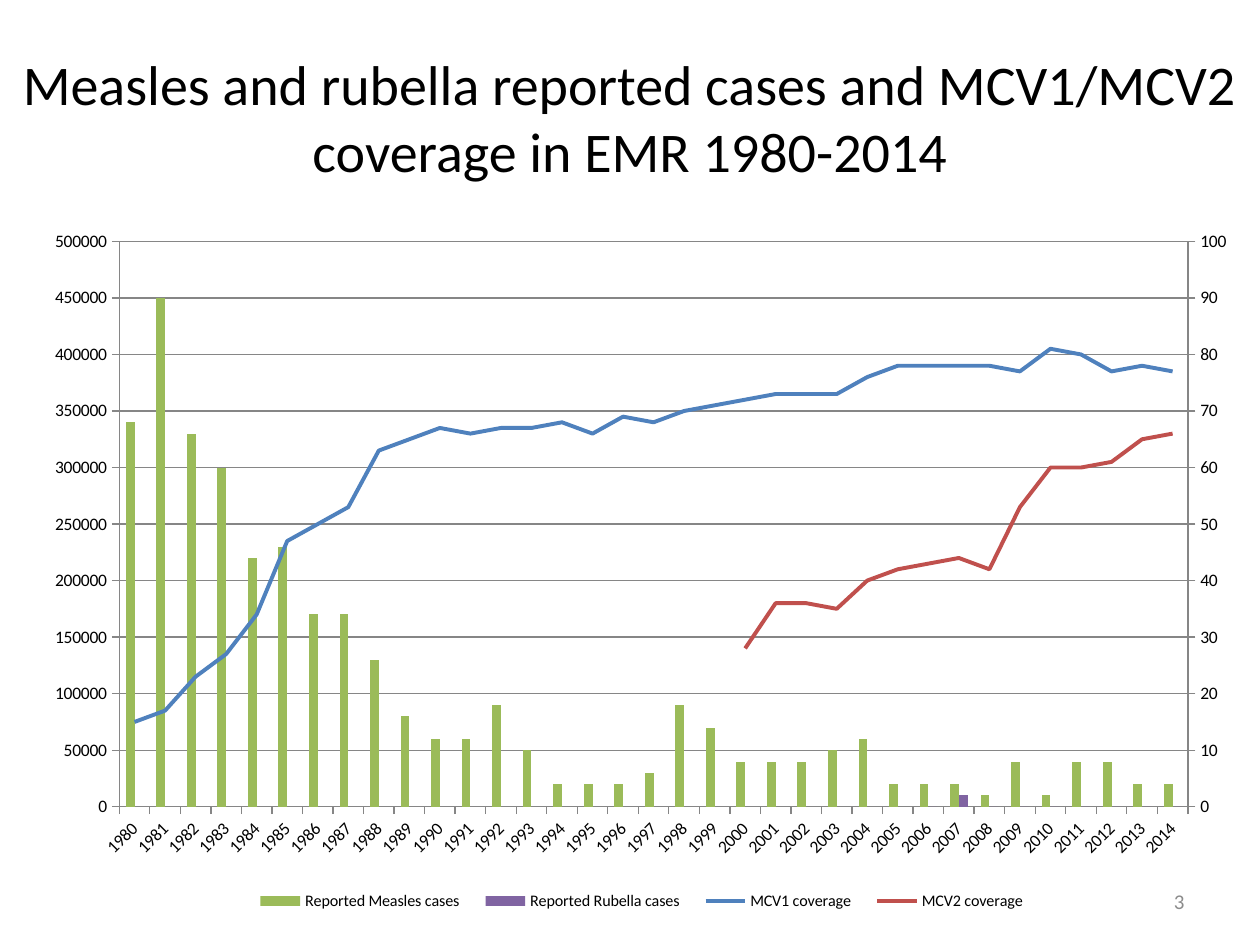
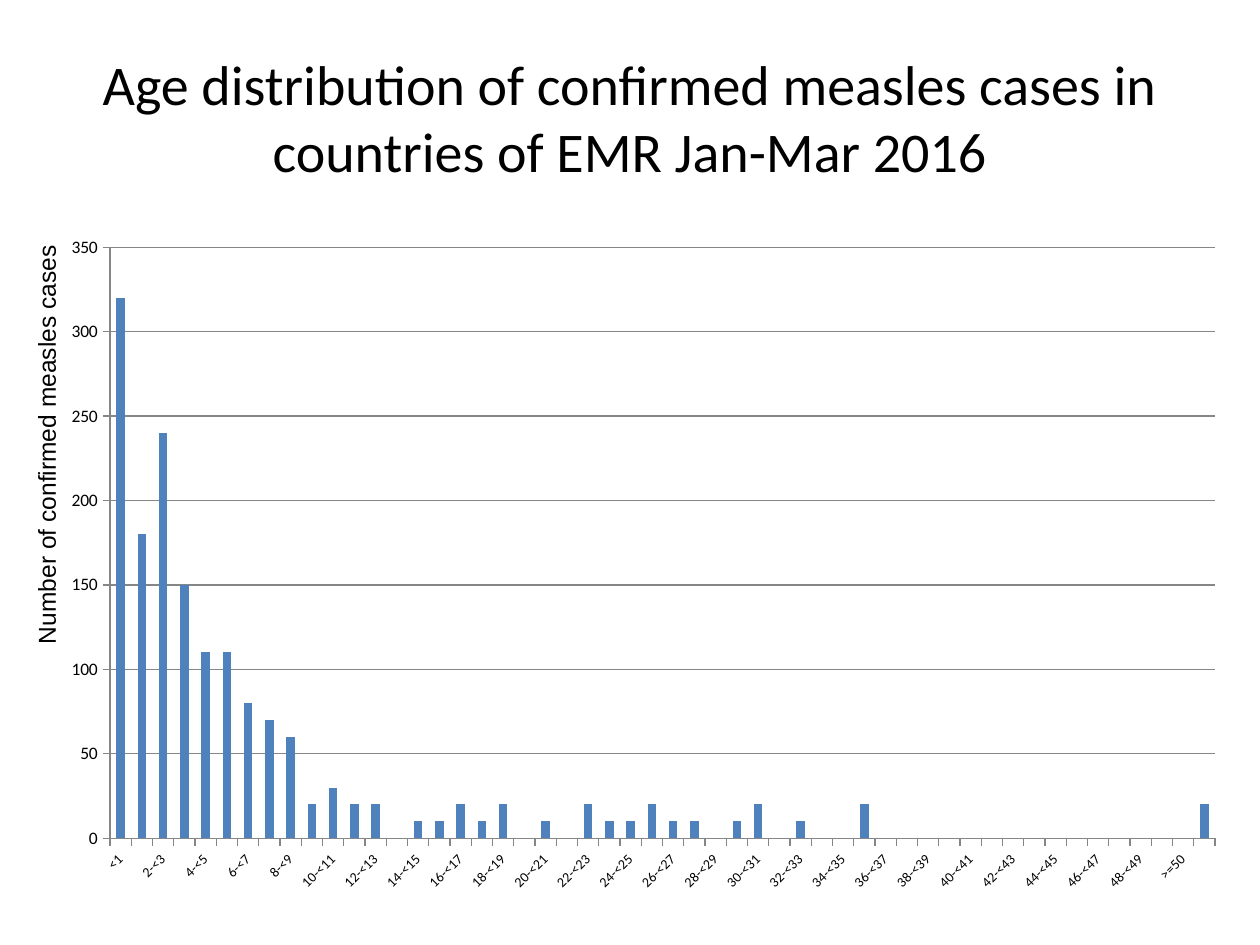
from copy import deepcopy

from lxml.etree import SubElement
from pptx import Presentation
from pptx.chart.data import CategoryChartData
from pptx.dml.color import RGBColor
from pptx.enum.chart import XL_CHART_TYPE, XL_LEGEND_POSITION, XL_MARKER_STYLE, XL_TICK_MARK
from pptx.enum.text import MSO_ANCHOR, PP_ALIGN
from pptx.oxml import parse_xml
from pptx.oxml.ns import nsdecls, qn
from pptx.util import Pt

# Shared scale, fonts and colours
PX = 9144  # 100 px to the inch
BODY_FONT = "Calibri"
BLACK = RGBColor(0x00, 0x00, 0x00)
GREY = RGBColor(0x8C, 0x8C, 0x8C)
AXIS_GREY = RGBColor(0x86, 0x86, 0x86)
GREEN = RGBColor(0x9B, 0xBB, 0x59)
PURPLE = RGBColor(0x80, 0x64, 0xA2)
BLUE = RGBColor(0x4F, 0x81, 0xBD)
RED = RGBColor(0xC0, 0x50, 0x4D)

# Reported cases and vaccine coverage, by year
YEARS = [str(year) for year in range(1980, 2015)]
MEASLES = [10000 * count for count in (
    34, 45, 33, 30, 22, 23, 17, 17, 13, 8, 6, 6, 9, 5, 2, 2, 2, 3,
    9, 7, 4, 4, 4, 5, 6, 2, 2, 2, 1, 4, 1, 4, 4, 2, 2)]
RUBELLA = [None] * 26 + [0, 10000] + [0] * 7
MCV1 = [15, 17, 23, 27, 34, 47, 50, 53, 63, 65, 67, 66, 67, 67, 68, 66, 69, 68,
        70, 71, 72, 73, 73, 73, 76, 78, 78, 78, 78, 77, 81, 80, 77, 78, 77]
MCV2 = [None] * 20 + [28, 36, 36, 35, 40, 42, 43, 44, 42, 53, 60, 60, 61, 65, 66]
REPORTED_SERIES = {
    "Reported Measles cases": MEASLES,
    "Reported Rubella cases": RUBELLA,
    "MCV1 coverage": MCV1,
    "MCV2 coverage": MCV2,
}

# Confirmed cases, by age
AGES = ["<1"] + [f"{age}-{'' if age == 15 else '<'}{age + 1}" for age in range(1, 50)]
AGES += [">=50", "unkAge"]
CASES_BY_AGE = [320, 180, 240, 150, 110, 110, 80, 70, 60, 20, 30, 20, 20, 0, 10, 10, 20, 10,
                20, 0, 10, 0, 20, 10, 10, 20, 10, 10, 0, 10, 20, 0, 10, 0, 0, 20]
CASES_BY_AGE += [0] * 15 + [20]


def px(*lengths):
    return [length * PX for length in lengths]


def style_font(font, size, color=BLACK, name=BODY_FONT):
    font.size = Pt(size)
    font.name = name
    font.color.rgb = color


def add_text(page, text, place, size, color=BLACK, font=BODY_FONT,
             align=PP_ALIGN.LEFT, anchor=MSO_ANCHOR.TOP, rotation=0):
    box = page.shapes.add_textbox(*px(*place))
    box.rotation = rotation
    frame = box.text_frame
    frame.word_wrap = True
    frame.vertical_anchor = anchor
    para = frame.paragraphs[0]
    para.alignment = align
    for number, line in enumerate(text.split("\n")):
        if number:
            para.add_line_break()
        span = para.add_run()
        span.text = line
        style_font(span.font, size, color, font)


def add_title(page, text, left, width):
    add_text(page, text, (left, 30, width, 125), 32,
             align=PP_ALIGN.CENTER, anchor=MSO_ANCHOR.MIDDLE)


def remove_children(parent, tag):
    for child in parent.findall(qn(tag)):
        parent.remove(child)


def set_layout(parent, x, y, width, height, inner=False):
    """Place a plot area or a legend by fractions of the chart."""
    remove_children(parent, "c:layout")
    target = '<c:layoutTarget val="inner"/>' if inner else ""
    layout = parse_xml(
        f'<c:layout {nsdecls("c")}><c:manualLayout>{target}'
        '<c:xMode val="edge"/><c:yMode val="edge"/>'
        f'<c:x val="{x}"/><c:y val="{y}"/><c:w val="{width}"/><c:h val="{height}"/>'
        '</c:manualLayout></c:layout>')
    if inner:
        parent.insert(0, layout)
    else:
        parent.find(qn("c:legendPos")).addnext(layout)


def style_axis(axis, size):
    axis.major_tick_mark = XL_TICK_MARK.OUTSIDE
    axis.minor_tick_mark = XL_TICK_MARK.NONE
    axis.format.line.color.rgb = AXIS_GREY
    axis.format.line.width = Pt(0.75)
    axis.tick_labels.number_format = "General"
    axis.tick_labels.number_format_is_linked = False
    style_font(axis.tick_labels.font, size)


def add_column_chart(page, place, categories, series, colors, plot_place,
                     top, step, label_size=10, label_skip=1):
    data = CategoryChartData()
    data.categories = categories
    for name, values in series.items():
        data.add_series(name, values)
    chart = page.shapes.add_chart(XL_CHART_TYPE.COLUMN_CLUSTERED, *px(*place), data).chart
    chart.has_title = False
    chart.has_legend = False
    style_font(chart.font, 10)

    # Columns
    plot = chart.plots[0]
    plot.gap_width = 150
    plot.overlap = 0
    plot.vary_by_categories = False
    for column, color in zip(plot.series, colors):
        column.format.fill.solid()
        column.format.fill.fore_color.rgb = color

    # Axes
    style_axis(chart.category_axis, label_size)
    category_xml = chart.category_axis._element
    category_xml.txPr.find(qn("a:bodyPr")).set("rot", "-2700000")
    skip = parse_xml(f'<c:tickLblSkip {nsdecls("c")} val="{label_skip}"/>')
    category_xml.find(qn("c:noMultiLvlLbl")).addprevious(skip)
    value_axis = chart.value_axis
    style_axis(value_axis, 10)
    value_axis.minimum_scale = 0
    value_axis.maximum_scale = top
    value_axis.major_unit = step
    value_axis.has_major_gridlines = True
    value_axis.major_gridlines.format.line.color.rgb = AXIS_GREY
    value_axis.major_gridlines.format.line.width = Pt(0.75)
    set_layout(category_xml.getparent(), *plot_place, inner=True)
    return chart


def move_to_right_axis(chart, first, colors, top, step):
    """Turn the series from number first on into lines on a second axis."""
    column_xml = chart.plots[0]._element
    line_xml = parse_xml(
        f'<c:lineChart {nsdecls("c")}><c:grouping val="standard"/>'
        '<c:varyColors val="0"/></c:lineChart>')
    for series_xml in column_xml.findall(qn("c:ser"))[first:]:
        remove_children(series_xml, "c:invertIfNegative")
        line_xml.append(series_xml)
    SubElement(line_xml, qn("c:marker")).set("val", "1")
    for number in ("1001", "1002"):
        SubElement(line_xml, qn("c:axId")).set("val", number)
    column_xml.addnext(line_xml)

    # Second pair of axes: visible values, hidden categories
    values = deepcopy(chart.value_axis._element)
    categories = deepcopy(chart.category_axis._element)
    remove_children(values, "c:majorGridlines")
    scaling = values.find(qn("c:scaling"))
    for parent, tag, value in (
            (categories, "axId", "1001"), (categories, "crossAx", "1002"),
            (categories, "delete", "1"),
            (values, "axId", "1002"), (values, "crossAx", "1001"),
            (values, "axPos", "r"), (values, "crosses", "max"),
            (scaling, "max", str(top)), (values, "majorUnit", str(step))):
        parent.find(qn(f"c:{tag}")).set("val", value)
    chart.value_axis._element.addnext(values)
    values.addnext(categories)

    for line, color in zip(chart.plots[1].series, colors):
        line.smooth = False
        line.marker.style = XL_MARKER_STYLE.NONE
        line.format.line.color.rgb = color
        line.format.line.width = Pt(2.25)


def add_legend(chart, *place):
    chart.has_legend = True
    chart.legend.position = XL_LEGEND_POSITION.BOTTOM
    chart.legend.include_in_layout = False
    style_font(chart.legend.font, 9.2)
    set_layout(chart.legend._element, *place)


def build_coverage_page(page):
    add_title(page, "Measles and rubella reported cases and MCV1/MCV2\n"
                    "coverage in EMR 1980-2014", 0, 1000)
    add_text(page, "3", (717, 695, 233, 40), 12, GREY,
             align=PP_ALIGN.RIGHT, anchor=MSO_ANCHOR.MIDDLE)
    chart = add_column_chart(page, (28, 175, 953, 554), YEARS, REPORTED_SERIES,
                             (GREEN, PURPLE), (0.07, 0.03, 0.89, 0.81), 500000, 50000)
    move_to_right_axis(chart, 2, (BLUE, RED), 100, 10)
    add_legend(chart, 0.17, 0.95, 0.67, 0.05)


def build_age_page(page):
    add_title(page, "Age distribution of confirmed measles cases in "
                    "countries of EMR Jan-Mar 2016", 50, 900)
    add_column_chart(page, (50, 175, 933, 533), AGES, {"Series 1": CASES_BY_AGE},
                     (BLUE,), (0.04, 0.04, 0.94, 0.88), 350, 50,
                     label_size=8, label_skip=2)
    add_text(page, "Number of confirmed measles cases", (-136, 331, 346, 34), 14,
             font="Arial", rotation=270)


def main():
    deck = Presentation()
    deck.slide_width, deck.slide_height = px(1000, 750)
    for build in (build_coverage_page, build_age_page):
        build(deck.slides.add_slide(deck.slide_layouts[6]))
    deck.save("out.pptx")


if __name__ == "__main__":
    main()
